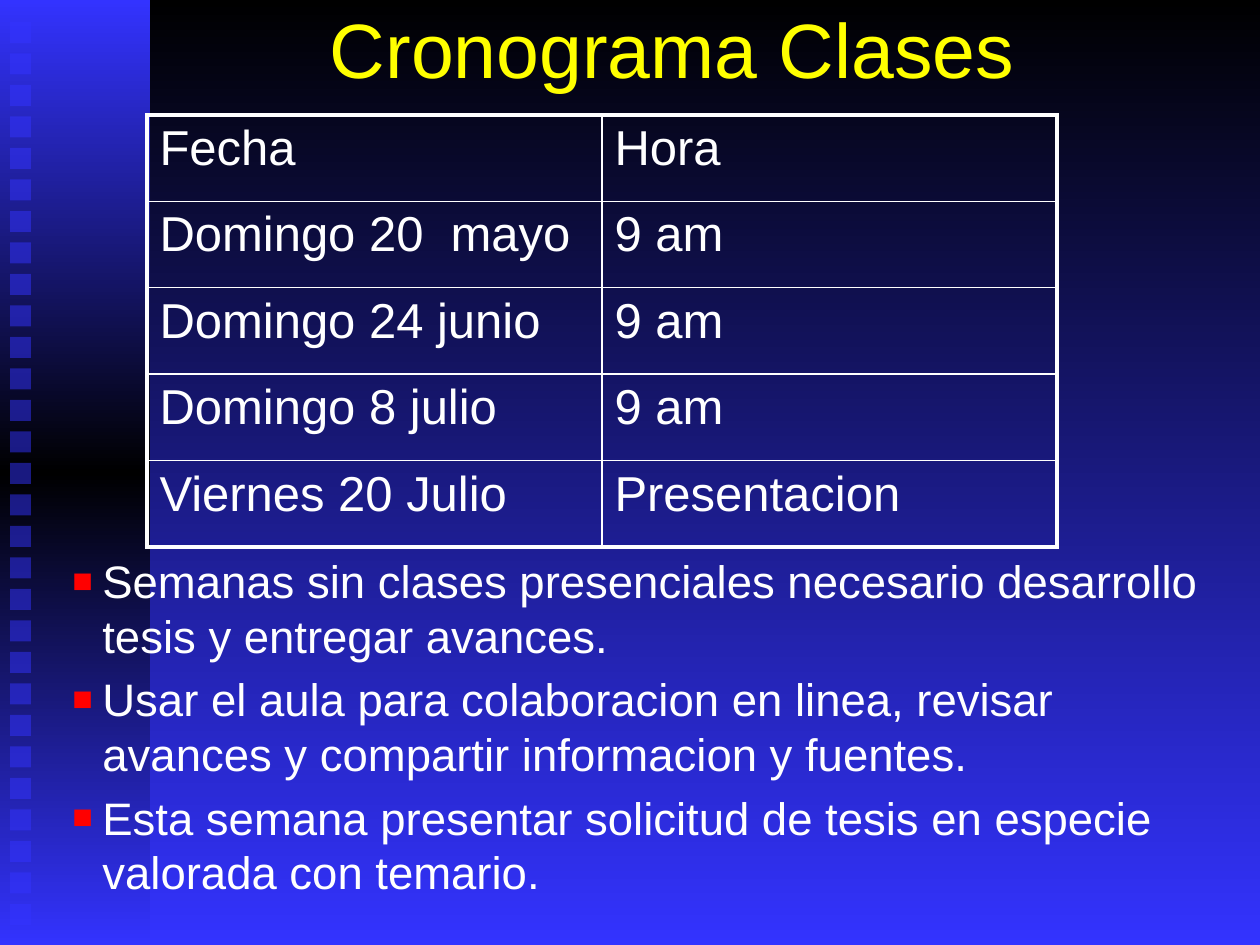
import copy
import pptx
import pptx.util
import pptx.dml.color
import pptx.enum.shapes
import pptx.enum.text
import pptx.oxml
import pptx.oxml.ns

TITLE = "Cronograma Clases"
ROWS = [
    ("Fecha", "Hora"),
    ("Domingo 20  mayo", "9 am"),
    ("Domingo 24 junio", "9 am"),
    ("Domingo 8 julio", "9 am"),
    ("Viernes 20 Julio", "Presentacion"),
]
NOTES = [
    "Semanas sin clases presenciales necesario desarrollo tesis y entregar avances.",
    "Usar el aula para colaboracion en linea, revisar avances y compartir informacion y fuentes.",
    "Esta semana presentar solicitud de tesis en especie valorada con temario.",
]
BLUE, BLACK, WHITE, YELLOW, RED = "3333FF", "000000", "FFFFFF", "FFFF00", "FF0000"
WIDE, HIGH = 1260, 945
SQUARES = 29
SPACE = 'xmlns:a="http://schemas.openxmlformats.org/drawingml/2006/main"'


def px(n):
    return pptx.util.Emu(round(n * 914400 / 126))


def box(*sides):
    return [px(n) for n in sides]


def rgb(hue):
    return pptx.dml.color.RGBColor.from_string(hue)


def tag(name):
    return pptx.oxml.ns.qn(name)


def style(para, size, hue):
    para.font.size = pptx.util.Pt(size)
    para.font.name = "Arial"
    para.font.color.rgb = rgb(hue)


def blend(fill, root, hues):
    """Fill from top to bottom with evenly spaced colours."""
    fill.gradient()
    fill.gradient_angle = 270
    stops = next(root.iter(tag("a:gsLst")))
    while len(stops) < len(hues):
        stops.append(copy.deepcopy(stops[0]))
    for i, (stop, hue) in enumerate(zip(fill.gradient_stops, hues)):
        stop.position = i / (len(hues) - 1)
        stop.color.rgb = rgb(hue)


def add_rect(slide, *sides):
    shape = slide.shapes.add_shape(pptx.enum.shapes.MSO_SHAPE.RECTANGLE, *box(*sides))
    shape.shadow.inherit = False
    shape.line.fill.background()
    return shape


def add_text(slide, *sides):
    frame = slide.shapes.add_textbox(*box(*sides)).text_frame
    frame.word_wrap = True
    return frame


def add_band(slide):
    band = add_rect(slide, 0, 0, 150, HIGH)
    blend(band.fill, band._element, [BLUE, BLACK, BLUE])
    for i in range(SQUARES):
        square = add_rect(slide, 10, 22 + i * 63 / 2, 21, 21)
        square.fill.solid()
        square.fill.fore_color.rgb = rgb(BLUE)
        tint = next(square._element.iter(tag("a:srgbClr")))
        tint.append(pptx.oxml.parse_xml(f'<a:alpha {SPACE} val="50000"/>'))


def add_title(slide):
    frame = add_text(slide, 137, -31, 1071, 157)
    frame.vertical_anchor = pptx.enum.text.MSO_ANCHOR.MIDDLE
    para = frame.paragraphs[0]
    para.text = TITLE
    para.alignment = pptx.enum.text.PP_ALIGN.CENTER
    style(para, 44, YELLOW)


def add_notes(slide):
    frame = add_text(slide, 60, 547, 1157, 363)
    for i, note in enumerate(NOTES):
        para = frame.add_paragraph() if i else frame.paragraphs[0]
        para.text = note
        para.space_before = pptx.util.Pt(5.2)
        style(para, 26, WHITE)
        props = para._p.get_or_add_pPr()
        props.set("marL", str(px(30)))
        props.set("indent", str(-px(30)))
        mark = pptx.oxml.parse_xml(
            f'<a:x {SPACE}><a:buClr><a:srgbClr val="{RED}"/></a:buClr>'
            '<a:buSzPct val="75000"/><a:buFont typeface="Arial"/>'
            '<a:buChar char="■"/></a:x>')
        for part in list(mark):
            props.find(tag("a:defRPr")).addprevious(part)


def add_edge(cell, side, width):
    cell._tc.get_or_add_tcPr().append(pptx.oxml.parse_xml(
        f'<a:ln{side} {SPACE} w="{pptx.util.Pt(width)}"><a:solidFill>'
        f'<a:srgbClr val="{WHITE}"/></a:solidFill></a:ln{side}>'))


def add_dates(slide):
    count, cols, high = len(ROWS), len(ROWS[0]), 432
    table = slide.shapes.add_table(count, cols, *box(147, 115, 910, high)).table
    table.first_row = table.horz_banding = False
    for r, row in enumerate(ROWS):
        table.rows[r].height = px(high / count)
        for c, word in enumerate(row):
            cell = table.cell(r, c)
            cell.text = word
            style(cell.text_frame.paragraphs[0], 28, WHITE)
            outer = {"L": c == 0, "R": c == cols - 1, "T": r == 0, "B": r == count - 1}
            for side, out in outer.items():
                add_edge(cell, side, 2.25 if out else 1)
            cell.fill.background()


def main():
    deck = pptx.Presentation()
    deck.slide_width, deck.slide_height = box(WIDE, HIGH)
    slide = deck.slides.add_slide(deck.slide_layouts[6])
    blend(slide.background.fill, slide._element, [BLACK, BLUE])
    add_band(slide)
    add_title(slide)
    add_notes(slide)
    add_dates(slide)
    deck.save("out.pptx")


if __name__ == "__main__":
    main()
